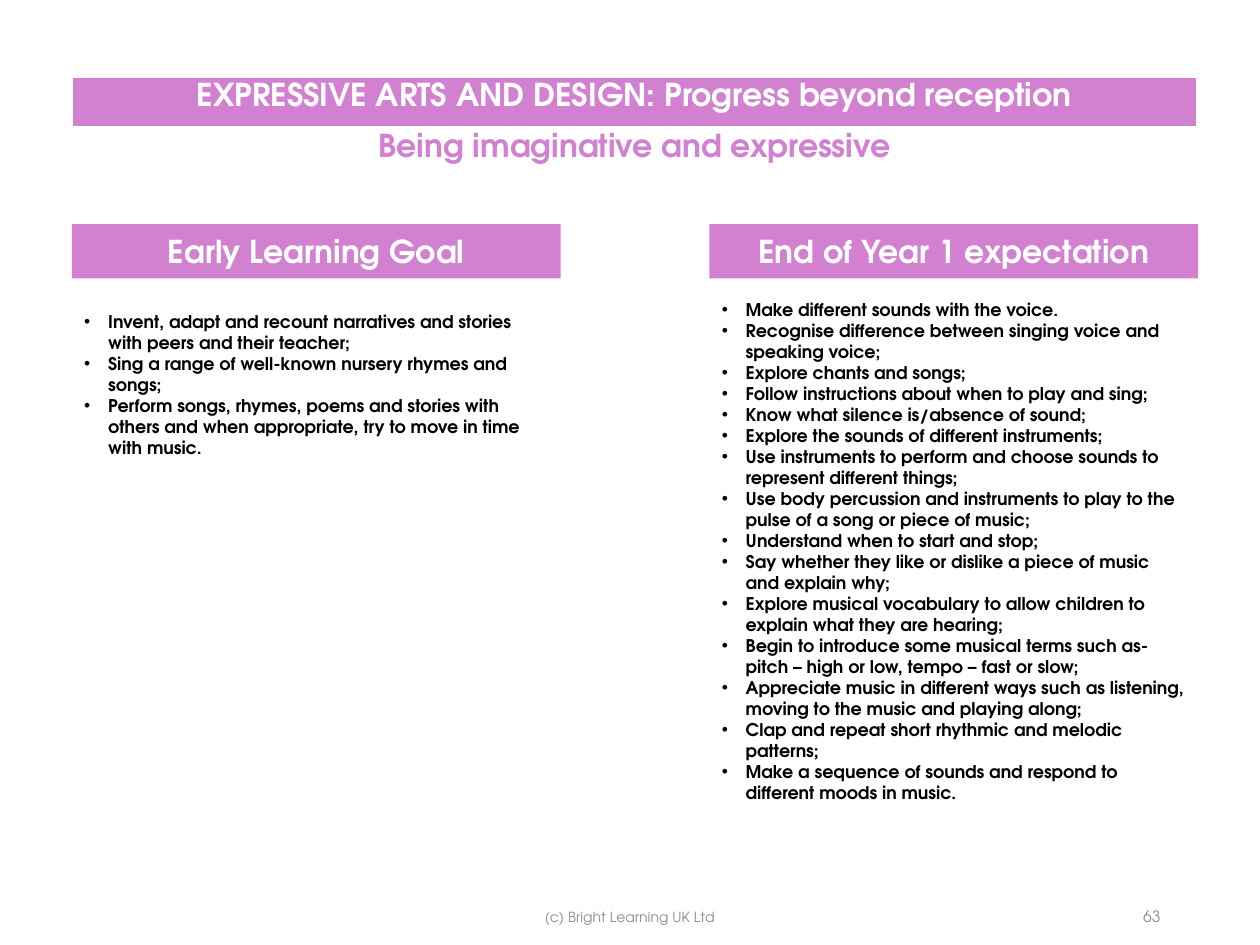
from lxml.etree import SubElement
from pptx import Presentation
from pptx.dml.color import RGBColor
from pptx.enum.shapes import MSO_SHAPE
from pptx.enum.text import MSO_ANCHOR, PP_ALIGN
from pptx.oxml.ns import qn
from pptx.util import Inches, Pt

FONT = "TeX Gyre Adventor"
ORCHID = RGBColor(0xD2, 0x80, 0xD0)
WHITE = RGBColor(0xFF, 0xFF, 0xFF)
BLACK = RGBColor(0, 0, 0)
GREY = RGBColor(0x8C, 0x8C, 0x8C)

LEFT, COLUMN_WIDTH, COLUMN_STEP = 0.57, 3.88, 5.06
HEADING_TOP, HEADING_HEIGHT, LIST_TOP = 1.78, 0.43, 2.35
BULLET_INDENT = 0.19

TITLE_ROWS = [
    ("EXPRESSIVE ARTS AND DESIGN: Progress beyond reception", WHITE, ORCHID, 3),
    ("Being imaginative and expressive", ORCHID, WHITE, 1),
]
EARLY_GOALS = [
    "Invent, adapt and recount narratives and stories with peers and their teacher;",
    "Sing a range of well-known nursery rhymes and songs;",
    "Perform songs, rhymes, poems and stories with others and when appropriate, "
    "try to move in time with music.",
]
YEAR_ONE_GOALS = [
    "Make different sounds with the voice.",
    "Recognise difference between singing voice and speaking voice;",
    "Explore chants and songs;",
    "Follow instructions about when to play and sing;",
    "Know what silence is/absence of sound;",
    "Explore the sounds of different instruments;",
    "Use instruments to perform and choose sounds to represent different things;",
    "Use body percussion and instruments to play to the pulse of a song or piece of music;",
    "Understand when to start and stop;",
    "Say whether they like or dislike a piece of music and explain why;",
    "Explore musical vocabulary to allow children to explain what they are hearing;",
    "Begin to introduce some musical terms such as- pitch – high or low, tempo – fast or slow;",
    "Appreciate music in different ways such as listening, moving to the music and playing along;",
    "Clap and repeat short rhythmic and melodic patterns;",
    "Make a sequence of sounds and respond to different moods in music.",
]
COLUMNS = [
    ("Early Learning Goal", EARLY_GOALS, 1.4, MSO_ANCHOR.MIDDLE),
    ("End of Year 1 expectation", YEAR_ONE_GOALS, 4.22, MSO_ANCHOR.TOP),
]


def write_text(paragraph, text, size=18, color=WHITE, bold=True, align=PP_ALIGN.CENTER):
    """Fill a paragraph with one formatted run."""
    paragraph.alignment = align
    run = paragraph.add_run()
    run.text = text
    run.font.name = FONT
    run.font.size = Pt(size)
    run.font.bold = bold
    run.font.color.rgb = color


def add_bullet(paragraph):
    """Give a paragraph a hanging round bullet."""
    properties = paragraph._p.get_or_add_pPr()
    properties.set("marL", str(Inches(BULLET_INDENT)))
    properties.set("indent", str(-Inches(BULLET_INDENT)))
    SubElement(properties, qn("a:buFont")).set("typeface", "Arial")
    SubElement(properties, qn("a:buChar")).set("char", "•")


def set_borders(cell, bottom_width):
    """Draw white borders round a cell, with its own bottom width."""
    properties = cell._tc.get_or_add_tcPr()
    widths = {"a:lnL": 1, "a:lnR": 1, "a:lnT": 1, "a:lnB": bottom_width}
    for position, (tag, width) in enumerate(widths.items()):
        line = SubElement(properties, qn(tag), w=str(Pt(width)))
        fill = SubElement(line, qn("a:solidFill"))
        SubElement(fill, qn("a:srgbClr")).set("val", str(WHITE))
        properties.insert(position, line)


def add_title_table(slide):
    """Add the two-row title table."""
    frame = slide.shapes.add_table(
        len(TITLE_ROWS), 1, Inches(LEFT), Inches(0.61), Inches(8.93), Inches(0.81)
    )
    table = frame.table
    for index, (text, color, fill, bottom_width) in enumerate(TITLE_ROWS):
        cell = table.cell(index, 0)
        cell.margin_top = Inches(0.05)
        cell.margin_bottom = 0
        cell.fill.solid()
        cell.fill.fore_color.rgb = fill
        set_borders(cell, bottom_width)
        write_text(cell.text_frame.paragraphs[0], text, color=color)


def add_heading(slide, text, left):
    """Add a filled column heading."""
    shape = slide.shapes.add_shape(
        MSO_SHAPE.RECTANGLE, Inches(left), Inches(HEADING_TOP),
        Inches(COLUMN_WIDTH), Inches(HEADING_HEIGHT),
    )
    shape.shadow.inherit = False
    shape.fill.solid()
    shape.fill.fore_color.rgb = ORCHID
    shape.line.fill.background()
    shape.text_frame.vertical_anchor = MSO_ANCHOR.MIDDLE
    write_text(shape.text_frame.paragraphs[0], text)


def add_text_frame(slide, left, top, width, height, anchor=MSO_ANCHOR.MIDDLE):
    """Add a wrapping text box and return its text frame."""
    box = slide.shapes.add_textbox(Inches(left), Inches(top), Inches(width), Inches(height))
    frame = box.text_frame
    frame.word_wrap = True
    frame.vertical_anchor = anchor
    return frame


def add_bullet_list(slide, items, left, height, anchor):
    """Add a bulleted list below a column heading."""
    frame = add_text_frame(slide, left, LIST_TOP, COLUMN_WIDTH, height, anchor)
    frame.margin_top = frame.margin_bottom = Inches(0.02)
    for index, item in enumerate(items):
        paragraph = frame.add_paragraph() if index else frame.paragraphs[0]
        write_text(paragraph, item, size=10, color=BLACK, align=PP_ALIGN.LEFT)
        add_bullet(paragraph)


def add_footer(slide):
    """Add the copyright line and the page number."""
    copyright_frame = add_text_frame(slide, 3.31, 7.08, 3.38, 0.4)
    write_text(copyright_frame.paragraphs[0], "(c) Bright Learning UK Ltd",
               size=8, color=GREY, bold=False)
    number_frame = add_text_frame(slide, 7.06, 7.07, 2.25, 0.4)
    write_text(number_frame.paragraphs[0], "63",
               size=9, color=GREY, bold=False, align=PP_ALIGN.RIGHT)


def main():
    """Build and save the slide."""
    presentation = Presentation()
    presentation.slide_width = Inches(10)
    presentation.slide_height = Inches(7.5)
    slide = presentation.slides.add_slide(presentation.slide_layouts[6])
    add_title_table(slide)
    for index, (heading, items, height, anchor) in enumerate(COLUMNS):
        left = LEFT + index * COLUMN_STEP
        add_heading(slide, heading, left)
        add_bullet_list(slide, items, left, height, anchor)
    add_footer(slide)
    presentation.save("out.pptx")


if __name__ == "__main__":
    main()
